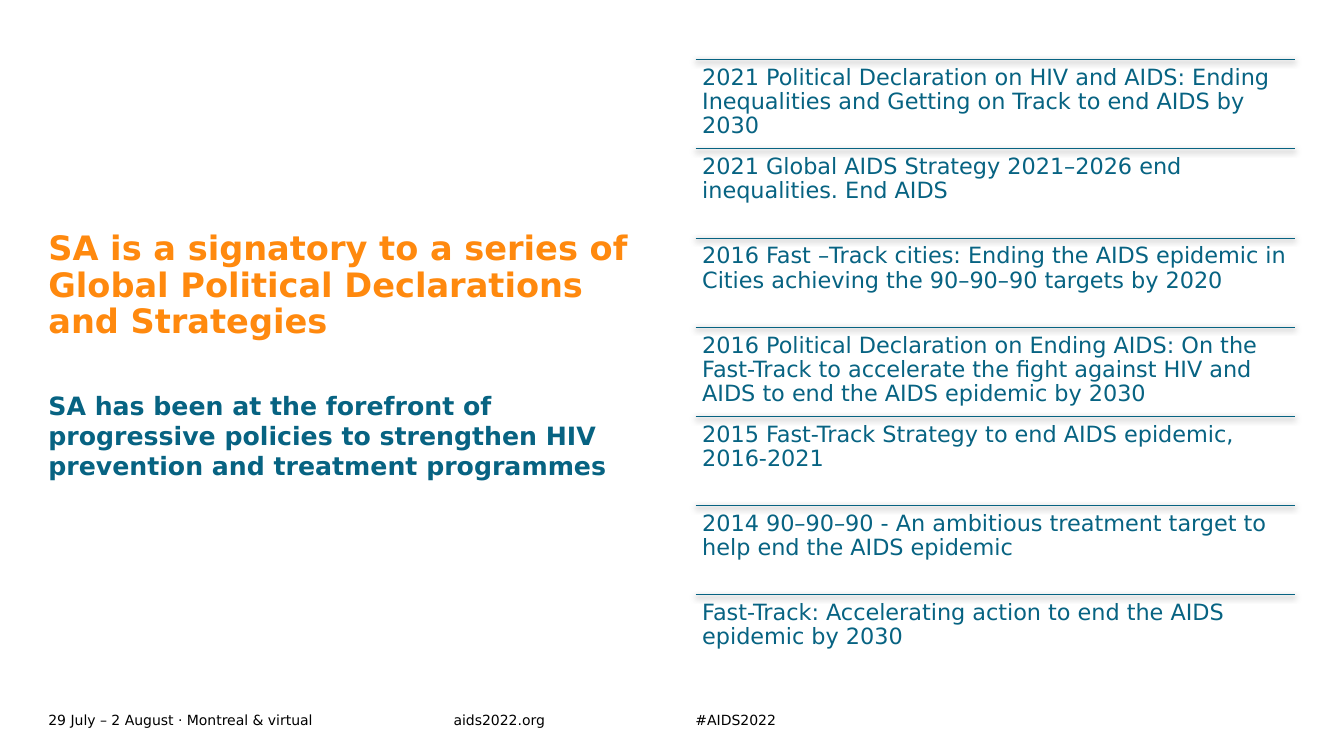
from dataclasses import dataclass

import lxml.etree
import pptx
import pptx.dml.color
import pptx.enum.shapes
import pptx.enum.text
import pptx.oxml
import pptx.oxml.ns
import pptx.util

Pt = pptx.util.Pt
Anchor = pptx.enum.text.MSO_ANCHOR

COLORS = {"teal": "076382", "orange": "FF890E", "black": "000000"}
FONT = "DejaVu Sans"
LEFT, RIGHT, COLUMN_WIDTH = 34.56, 496.8, 428.4
LIST_TOP, ROW_HEIGHT = 42.48, 63.72
FOOTER_TOP, FOOTER_HEIGHT = 505.44, 17.28


@dataclass
class TextBlock:
    text: str
    left: float
    top: float
    width: float
    height: float
    size: float
    color: str
    bold: bool = False
    anchor: Anchor = Anchor.TOP
    inset: float = 0
    line_spacing: float = 1.0


DECLARATIONS = [
    "2021 Political Declaration on HIV and AIDS: Ending Inequalities and Getting on Track to end AIDS by 2030",
    "2021 Global AIDS Strategy 2021–2026 end inequalities. End AIDS",
    "2016 Fast –Track cities: Ending the AIDS epidemic in Cities achieving the 90–90–90 targets by 2020",
    "2016 Political Declaration on Ending AIDS: On the Fast-Track to accelerate the fight against HIV and AIDS to end the AIDS epidemic by 2030",
    "2015 Fast-Track Strategy to end AIDS epidemic, 2016-2021",
    "2014 90–90–90 - An ambitious treatment target to help end the AIDS epidemic",
    "Fast-Track: Accelerating action to end the AIDS epidemic by 2030",
]

FOOTERS = [
    ("29 July – 2 August · Montreal & virtual", LEFT, 289.44),
    ("aids2022.org", 324, 138.96),
    ("#AIDS2022", RIGHT, 138.96),
]

HEADINGS = [
    TextBlock("SA is a signatory to a series of Global Political Declarations and Strategies",
              LEFT, 131.04, COLUMN_WIDTH, 112.32, 24, "orange", True, Anchor.BOTTOM,
              line_spacing=0.9),
    TextBlock("SA has been at the forefront of progressive policies to strengthen HIV "
              "prevention and treatment programmes",
              LEFT, 278.64, COLUMN_WIDTH, 87.84, 18, "teal", True),
]


def rgb(name: str) -> pptx.dml.color.RGBColor:
    return pptx.dml.color.RGBColor.from_string(COLORS[name])


def add_text(slide: pptx.slide.Slide, block: TextBlock) -> None:
    shape = slide.shapes.add_textbox(
        Pt(block.left), Pt(block.top), Pt(block.width), Pt(block.height))
    frame = shape.text_frame
    frame.word_wrap = True
    frame.vertical_anchor = block.anchor
    frame.margin_left = frame.margin_right = Pt(block.inset)
    frame.margin_top = frame.margin_bottom = Pt(block.inset)
    paragraph = frame.paragraphs[0]
    paragraph.line_spacing = block.line_spacing
    run = paragraph.add_run()
    run.text = block.text
    run.font.name = FONT
    run.font.size = Pt(block.size)
    run.font.bold = block.bold
    run.font.color.rgb = rgb(block.color)


def add_rule(slide: pptx.slide.Slide, top: float) -> None:
    rule = slide.shapes.add_connector(
        pptx.enum.shapes.MSO_CONNECTOR.STRAIGHT,
        Pt(RIGHT), Pt(top), Pt(RIGHT + COLUMN_WIDTH), Pt(top))
    rule.line.color.rgb = rgb("teal")
    rule.line.width = Pt(0.5)
    qn = pptx.oxml.ns.qn
    properties = rule.element.find(qn("p:spPr"))
    effects = lxml.etree.SubElement(properties, qn("a:effectLst"))
    shadow = lxml.etree.SubElement(
        effects, qn("a:outerShdw"), blurRad=str(Pt(4.5)), dist=str(Pt(1.5)),
        dir="5400000", algn="ctr", rotWithShape="0")
    color = lxml.etree.SubElement(shadow, qn("a:srgbClr"), val=COLORS["black"])
    lxml.etree.SubElement(color, qn("a:alpha"), val="63000")


def main() -> None:
    presentation = pptx.Presentation()
    presentation.slide_width = Pt(960)
    presentation.slide_height = Pt(540)
    slide = presentation.slides.add_slide(presentation.slide_layouts[6])

    for text, left, width in FOOTERS:
        add_text(slide, TextBlock(text, left, FOOTER_TOP, width, FOOTER_HEIGHT, 10, "black",
                                  anchor=Anchor.MIDDLE))
    for heading in HEADINGS:
        add_text(slide, heading)
    for row, declaration in enumerate(DECLARATIONS):
        top = LIST_TOP + row * ROW_HEIGHT
        add_rule(slide, top)
        add_text(slide, TextBlock(declaration, RIGHT, top, COLUMN_WIDTH, ROW_HEIGHT, 16, "teal",
                                  inset=4.8, line_spacing=0.9))
    presentation.save("out.pptx")


if __name__ == "__main__":
    main()
